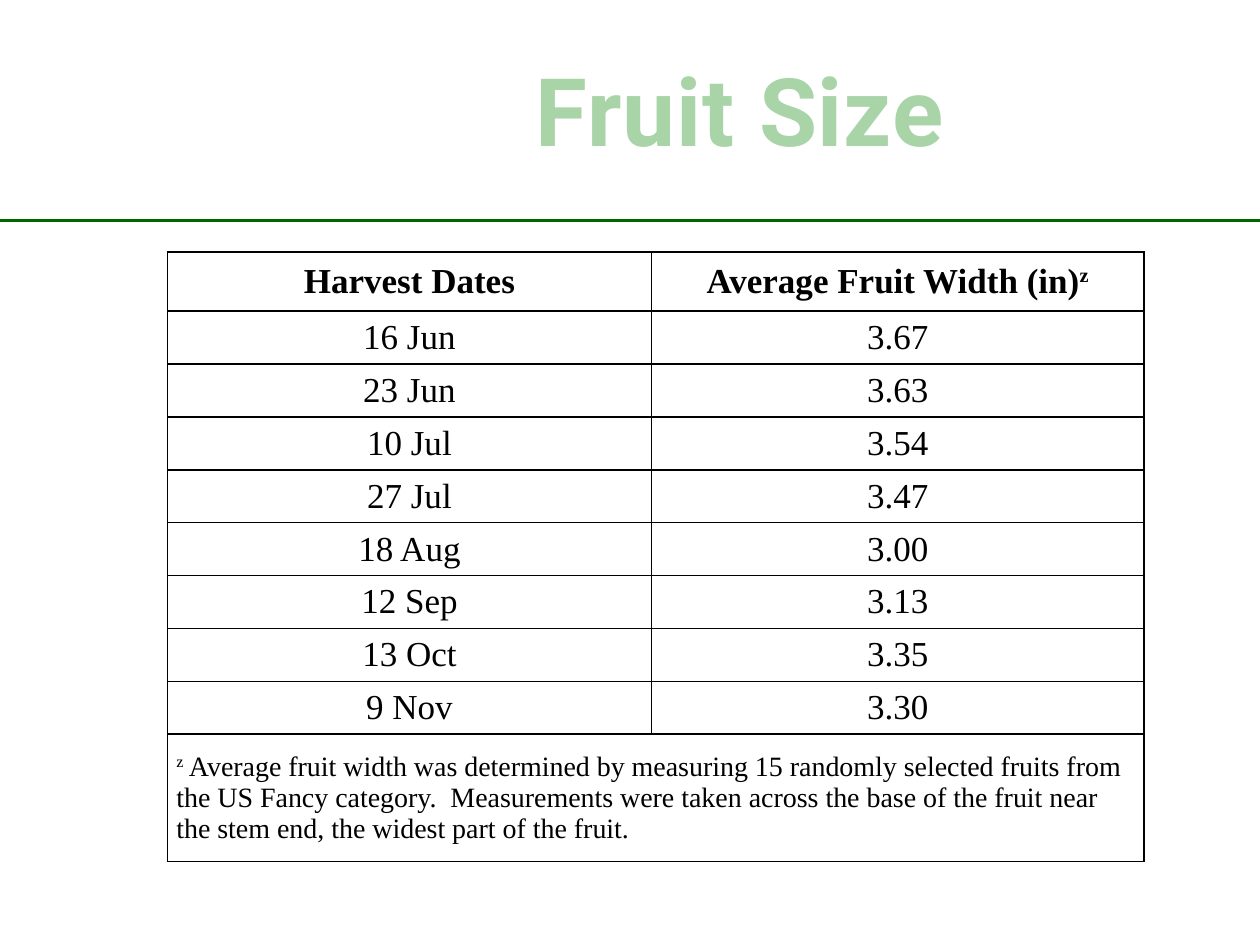
from typing import NamedTuple

import pptx
import pptx.dml.color
import pptx.enum.shapes
import pptx.enum.text
import pptx.oxml
import pptx.oxml.ns
import pptx.util
from pptx.util import Inches, Pt

RGBColor = pptx.dml.color.RGBColor
PALE_GREEN = RGBColor(0xA8, 0xD4, 0xA8)
DARK_GREEN = RGBColor(0x00, 0x66, 0x00)
BLACK = RGBColor(0, 0, 0)
WHITE = RGBColor(0xFF, 0xFF, 0xFF)

CENTER = pptx.enum.text.PP_ALIGN.CENTER
LEFT = pptx.enum.text.PP_ALIGN.LEFT
MIDDLE = pptx.enum.text.MSO_ANCHOR.MIDDLE

SLIDE_WIDTH, SLIDE_HEIGHT = Inches(10), Inches(7.5)
COLUMN_WIDTHS = (3.84, 3.91)
HEADER_HEIGHT, HARVEST_HEIGHT, NOTE_HEIGHT = 0.47, 0.42, 1.01


class Harvest(NamedTuple):
    date: str
    width: str


class Span(NamedTuple):
    text: str
    raised: bool = False


HARVESTS = (
    Harvest("16 Jun", "3.67"),
    Harvest("23 Jun", "3.63"),
    Harvest("10 Jul", "3.54"),
    Harvest("27 Jul", "3.47"),
    Harvest("18 Aug", "3.00"),
    Harvest("12 Sep", "3.13"),
    Harvest("13 Oct", "3.35"),
    Harvest("9 Nov", "3.30"),
)
HEADER = (
    (Span("Harvest Dates"),),
    (Span("Average Fruit Width (in)"), Span("z", raised=True)),
)
FOOTNOTE = (
    Span("z", raised=True),
    Span(
        " Average fruit width was determined by measuring 15 randomly selected "
        "fruits from the US Fancy category.  Measurements were taken across the "
        "base of the fruit near the stem end, the widest part of the fruit."
    ),
)


def set_font(paragraph, name: str, size: float, color: RGBColor, bold: bool) -> None:
    font = paragraph.font
    font.name, font.size, font.bold = name, Pt(size), bold
    font.color.rgb = color


def add_title(slide, text: str) -> None:
    title = slide.shapes.add_textbox(Inches(2.08), Inches(0.24), Inches(7.58), Inches(1.25))
    frame = title.text_frame
    frame.word_wrap = True
    frame.vertical_anchor = MIDDLE
    paragraph = frame.paragraphs[0]
    paragraph.alignment = CENTER
    run = paragraph.add_run()
    run.text = text
    run._r.get_or_add_rPr().set("spc", "50")
    set_font(paragraph, "Roboto", 54, PALE_GREEN, True)


def add_rule(slide) -> None:
    height = Inches(1.75)
    rule = slide.shapes.add_connector(
        pptx.enum.shapes.MSO_CONNECTOR.STRAIGHT, 0, height, SLIDE_WIDTH, height
    )
    rule.line.color.rgb = DARK_GREEN
    rule.line.width = Pt(2.25)
    rule._element.spPr.append(pptx.oxml.parse_xml(
        f'<a:effectLst {pptx.oxml.ns.nsdecls("a")}/>'
    ))


def style_cell(cell) -> None:
    """Set the white fill, the margins and a thin black border on every side."""
    cell.vertical_anchor = MIDDLE
    cell.margin_left = cell.margin_right = Inches(0.07)
    cell.margin_top = cell.margin_bottom = 0
    cell.fill.solid()
    cell.fill.fore_color.rgb = WHITE
    properties = cell._tc.get_or_add_tcPr()
    for position, side in enumerate(("lnL", "lnR", "lnT", "lnB")):
        properties.insert(position, pptx.oxml.parse_xml(
            f'<a:{side} {pptx.oxml.ns.nsdecls("a")} w="{Pt(1)}">'
            f'<a:solidFill><a:srgbClr val="{BLACK}"/></a:solidFill></a:{side}>'
        ))


def write_cell(cell, spans: tuple[Span, ...], size: float = 20,
               bold: bool = False, alignment=CENTER) -> None:
    paragraph = cell.text_frame.paragraphs[0]
    paragraph.alignment = alignment
    for span in spans:
        run = paragraph.add_run()
        run.text = span.text
        if span.raised:
            run._r.get_or_add_rPr().set("baseline", "30000")
    set_font(paragraph, "Times New Roman", size, BLACK, bold)


def add_harvest_table(slide) -> None:
    heights = (HEADER_HEIGHT, *[HARVEST_HEIGHT] * len(HARVESTS), NOTE_HEIGHT)
    table = slide.shapes.add_table(
        len(heights), len(COLUMN_WIDTHS), Inches(1.33), Inches(2),
        Inches(sum(COLUMN_WIDTHS)), Inches(sum(heights)),
    ).table
    table.first_row = table.horz_banding = False
    for column, width in zip(table.columns, COLUMN_WIDTHS):
        column.width = Inches(width)
    for row, height in zip(table.rows, heights):
        row.height = Inches(height)
    for cell in table.iter_cells():
        style_cell(cell)

    for column, spans in enumerate(HEADER):
        write_cell(table.cell(0, column), spans, bold=True)
    for row, harvest in enumerate(HARVESTS, start=1):
        for column, value in enumerate(harvest):
            write_cell(table.cell(row, column), (Span(value),))
    last = len(heights) - 1
    note = table.cell(last, 0)
    note.merge(table.cell(last, len(COLUMN_WIDTHS) - 1))
    write_cell(note, FOOTNOTE, size=16, alignment=LEFT)


def main() -> None:
    presentation = pptx.Presentation()
    presentation.slide_width, presentation.slide_height = SLIDE_WIDTH, SLIDE_HEIGHT
    slide = presentation.slides.add_slide(presentation.slide_layouts[6])
    add_rule(slide)
    add_title(slide, "Fruit Size")
    add_harvest_table(slide)
    presentation.save("out.pptx")


if __name__ == "__main__":
    main()
